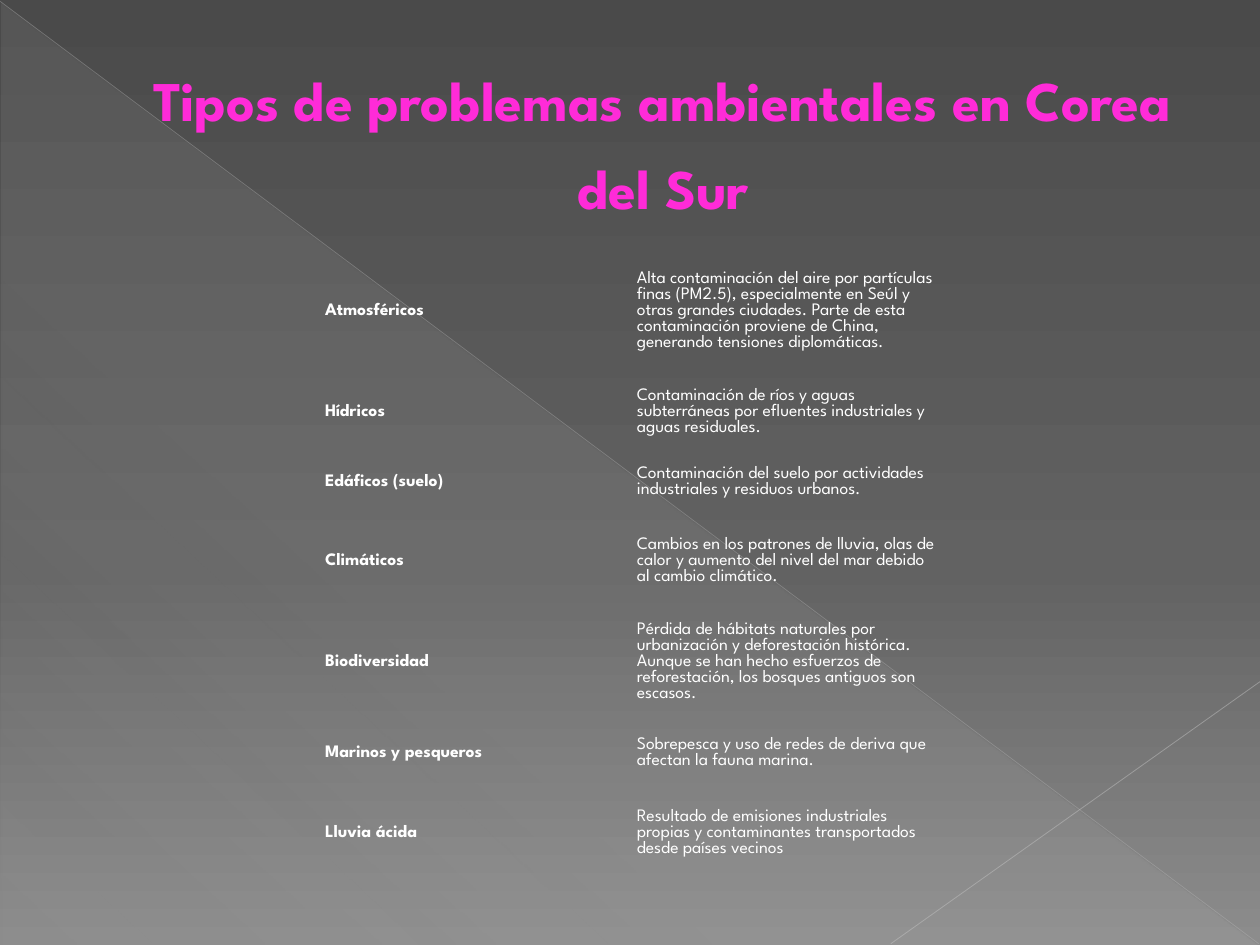
from lxml.etree import SubElement
from pptx import Presentation
from pptx.dml.color import RGBColor
from pptx.enum.shapes import MSO_CONNECTOR as Connector, MSO_SHAPE as Shape
from pptx.enum.text import MSO_ANCHOR as Anchor, PP_ALIGN as Align
from pptx.oxml.ns import qn
from pptx.util import Inches, Pt

FONT = "League Spartan"
WHITE = "FFFFFF"
PINK = "FF2BD8"
PLAIN_TABLE_STYLE = "{2D5ABB26-0587-4C30-8999-92F81FD0307C}"

TITLE = "Tipos de problemas ambientales en Corea del Sur"
# Problem type, description, row height
PROBLEMS = [
    ("Atmosféricos", "Alta contaminación del aire por partículas finas (PM2.5), "
     "especialmente en Seúl y otras grandes ciudades. Parte de esta contaminación "
     "proviene de China, generando tensiones diplomáticas.", 1.04),
    ("Hídricos", "Contaminación de ríos y aguas subterráneas por efluentes "
     "industriales y aguas residuales.", 0.55),
    ("Edáficos (suelo)", "Contaminación del suelo por actividades industriales "
     "y residuos urbanos.", 0.55),
    ("Climáticos", "Cambios en los patrones de lluvia, olas de calor y aumento "
     "del nivel del mar debido al cambio climático.", 0.71),
    ("Biodiversidad", "Pérdida de hábitats naturales por urbanización y "
     "deforestación histórica. Aunque se han hecho esfuerzos de reforestación, "
     "los bosques antiguos son escasos.", 0.88),
    ("Marinos y pesqueros", "Sobrepesca y uso de redes de deriva que afectan "
     "la fauna marina.", 0.55),
    ("Lluvia ácida", "Resultado de emisiones industriales propias y "
     "contaminantes transportados desde países vecinos", 0.71),
]


def color(code):
    return RGBColor.from_string(code)


def add_color(parent, code, opacity=100):
    node = SubElement(parent, qn("a:srgbClr"), val=code)
    if opacity < 100:
        SubElement(node, qn("a:alpha"), val=str(opacity * 1000))


def set_gradient(fill, owner, stops, angle):
    """Fill with (position, colour, opacity) stops."""
    fill.gradient()
    gradient = next(owner.iter(qn("a:gradFill")))
    for child in list(gradient):
        gradient.remove(child)
    stop_list = SubElement(gradient, qn("a:gsLst"))
    for position, code, opacity in stops:
        stop = SubElement(stop_list, qn("a:gs"), pos=str(position * 1000))
        add_color(stop, code, opacity)
    SubElement(gradient, qn("a:lin"), ang=str(angle * 60000), scaled="0")


def add_span(para, text, size, code, bold=False):
    span = para.add_run()
    span.text = text
    span.font.name = FONT
    span.font.size = Pt(size)
    span.font.bold = bold
    span.font.color.rgb = color(code)
    return span


def add_triangle(page):
    triangle = page.shapes.add_shape(
        Shape.RIGHT_TRIANGLE, Inches(0.01), Inches(0.02), Inches(9.98), Inches(7.48))
    triangle.shadow.inherit = False
    triangle.line.fill.background()
    set_gradient(triangle.fill, triangle._element,
                 [(0, "D2D2D2", 10), (70, "D2D2D2", 8), (100, "D2D2D2", 1)], 133)


def add_line(page, start, end, code, width, opacity):
    line = page.shapes.add_connector(
        Connector.STRAIGHT, *(Inches(value) for value in start + end))
    line.line.width = Pt(width)
    line.line.color.rgb = color(code)
    properties = line._element.spPr
    shade = next(properties.iter(qn("a:srgbClr")))
    SubElement(shade, qn("a:alpha"), val=str(opacity * 1000))
    SubElement(properties, qn("a:effectLst"))


def add_title(page):
    box = page.shapes.add_textbox(Inches(0.5), Inches(0.29), Inches(9), Inches(1.53))
    frame = box.text_frame
    frame.word_wrap = True
    frame.vertical_anchor = Anchor.MIDDLE
    para = frame.paragraphs[0]
    para.alignment = Align.CENTER
    para.line_spacing = 1.3
    para._p.get_or_add_pPr().set("marL", str(Inches(0.53)))
    span = add_span(para, TITLE, 32, PINK, bold=True)
    # Thin outline around the letters
    letters = span.font._element
    outline = SubElement(letters, qn("a:ln"), w=str(Pt(0.5)))
    add_color(SubElement(outline, qn("a:solidFill")), "B12761")
    letters.insert(0, outline)


def fill_cell(cell, text, bold):
    cell.fill.background()
    cell.vertical_anchor = Anchor.MIDDLE
    cell.margin_left = cell.margin_right = Inches(0.05)
    cell.margin_top = cell.margin_bottom = Inches(0.03)
    add_span(cell.text_frame.paragraphs[0], text, 10, WHITE, bold)


def add_problem_table(page):
    height = sum(problem[2] for problem in PROBLEMS)
    table = page.shapes.add_table(
        len(PROBLEMS), 2, Inches(2.53), Inches(1.95), Inches(4.95), Inches(height)).table
    table.first_row = table.horz_banding = False
    next(table._tbl.iter(qn("a:tableStyleId"))).text = PLAIN_TABLE_STYLE
    for row, (kind, description, row_height) in zip(table.rows, PROBLEMS):
        row.height = Inches(row_height)
        fill_cell(row.cells[0], kind, bold=True)
        fill_cell(row.cells[1], description, bold=False)


def main():
    deck = Presentation()
    deck.slide_width, deck.slide_height = Inches(10), Inches(7.5)
    page = deck.slides.add_slide(deck.slide_layouts[6])

    # Backdrop
    set_gradient(page.background.fill, page._element,
                 [(0, "4A4A4A", 100), (60, "626262", 100), (100, "8C8C8C", 100)], 90)
    add_triangle(page)
    add_line(page, (0, 0.01), (9.99, 7.49), "BFBFBF", 0.39, 35)
    add_line(page, (10, 5.41), (7.07, 7.49), "C6C6C6", 0.47, 45)

    # Content
    add_title(page)
    add_problem_table(page)
    deck.save("out.pptx")


if __name__ == "__main__":
    main()
